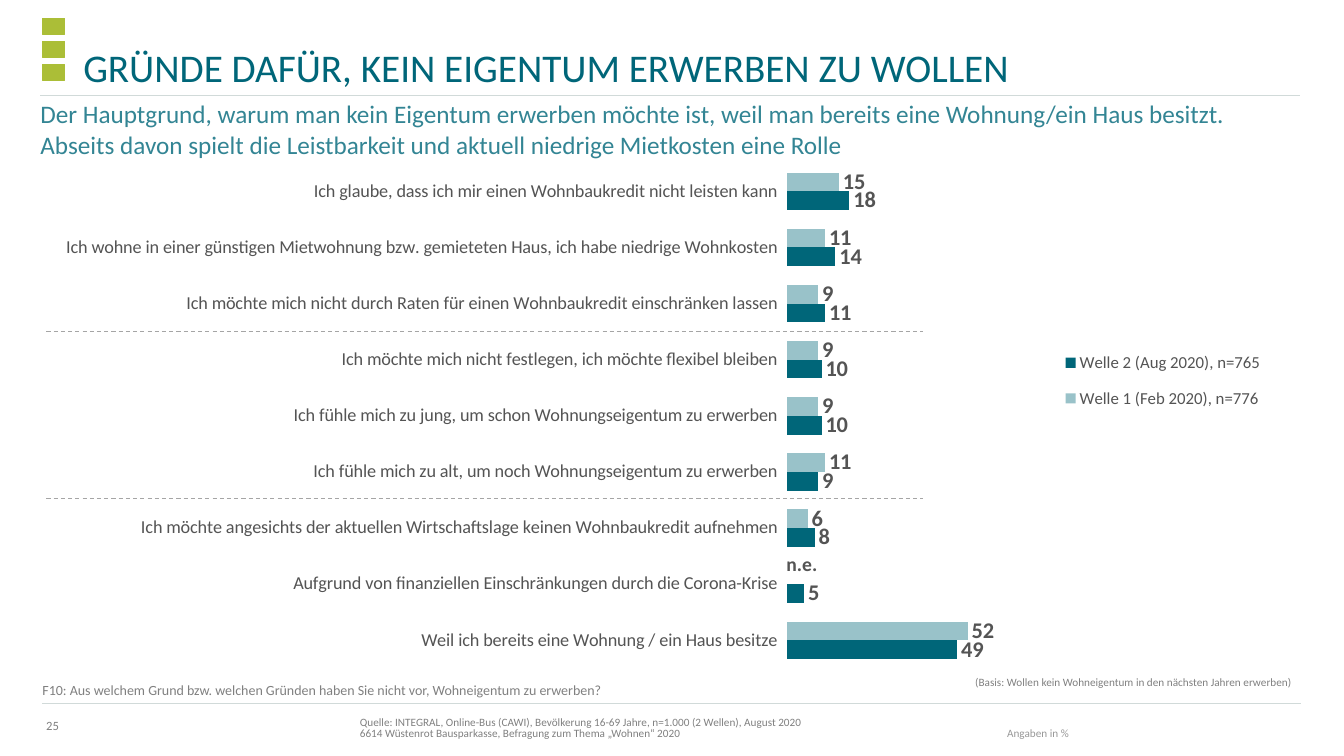
"""Build the slide on the reasons for not wanting to buy a home."""
from dataclasses import dataclass

from lxml.etree import Element, SubElement
from pptx import Presentation
from pptx.chart.data import CategoryChartData as ChartData
from pptx.dml.color import RGBColor
from pptx.enum.chart import XL_CHART_TYPE as Kind
from pptx.enum.chart import XL_LABEL_POSITION as Spot
from pptx.enum.chart import XL_LEGEND_POSITION as Side
from pptx.enum.chart import XL_TICK_LABEL_POSITION as TickSpot
from pptx.enum.chart import XL_TICK_MARK as Tick
from pptx.enum.dml import MSO_LINE as Dash
from pptx.enum.shapes import MSO_CONNECTOR as Link
from pptx.enum.shapes import MSO_SHAPE as Shape
from pptx.enum.text import MSO_ANCHOR as Anchor
from pptx.enum.text import PP_ALIGN as Align
from pptx.oxml.ns import qn
from pptx.slide import Slide
from pptx.text.text import Font
from pptx.util import Cm, Pt

FACE = "Calibri"
TEAL = RGBColor(0x00, 0x66, 0x79)
MID_TEAL = RGBColor(0x33, 0x85, 0x94)
PALE_TEAL = RGBColor(0x99, 0xC2, 0xC9)
GREEN = RGBColor(0xAB, 0xBE, 0x37)
DARK = RGBColor(0x54, 0x54, 0x54)
GRAY = RGBColor(0x80, 0x80, 0x80)
LIGHT = RGBColor(0x98, 0x98, 0x98)
RULE = RGBColor(0xD1, 0xDA, 0xD9)
DASHED = RGBColor(0xA5, 0xA5, 0xA5)


@dataclass(frozen=True)
class Note:
    text: str
    box: tuple[float, float, float, float]
    size: int
    color: RGBColor
    pad: tuple[float, float, float, float] = (0, 0.13, 0, 0.13)
    anchor: Anchor = Anchor.MIDDLE
    align: Align = Align.LEFT
    space: float | Pt | None = None
    wrap: bool = True
    bold: bool = False


@dataclass(frozen=True)
class Line:
    left: float
    right: float
    top: float
    color: RGBColor = RULE
    dash: Dash | None = None


@dataclass(frozen=True)
class Wave:
    name: str
    color: RGBColor
    values: tuple[int | None, ...]


FOOT_PAD = (0.56, 0.13, 0.25, 0.13)
NOTES = (
    Note("Quelle: INTEGRAL, Online-Bus (CAWI), Bevölkerung 16-69 Jahre, n=1.000 (2 Wellen), August 2020\n"
         "6614 Wüstenrot Bausparkasse, Befragung zum Thema „Wohnen“ 2020",
         (8.51, 17.93, 22.28, 0.84), 8, GRAY, FOOT_PAD, Anchor.BOTTOM, space=0.85),
    Note("Angaben in %", (24.82, 18.21, 2.57, 0.56), 8, LIGHT, FOOT_PAD, Anchor.BOTTOM, space=0.85),
    Note("25", (1.02, 18.08, 0.61, 0.38), 9, GRAY, (0, 0, 0, 0), align=Align.CENTER, wrap=False),
    Note("GRÜNDE DAFÜR, KEIN EIGENTUM ERWERBEN ZU WOLLEN", (1.85, 0.94, 30.94, 1.35), 28, TEAL,
         (0.25, 0, 0.25, 0), Anchor.BOTTOM, space=Pt(28)),
    Note("Der Hauptgrund, warum man kein Eigentum erwerben möchte ist, weil man bereits eine "
         "Wohnung/ein Haus besitzt. Abseits davon spielt die Leistbarkeit und aktuell niedrige "
         "Mietkosten eine Rolle", (1.02, 2.49, 31.78, 0.81), 18, MID_TEAL, (0, 0, 0.25, 0.13), Anchor.TOP),
    Note("F10: Aus welchem Grund bzw. welchen Gründen haben Sie nicht vor, Wohneigentum zu erwerben?",
         (1.07, 17.12, 21.34, 0.51), 10, GRAY),
    Note("(Basis: Wollen kein Wohneigentum in den nächsten Jahren erwerben)",
         (22.43, 16.74, 10.13, 0.91), 8, GRAY, align=Align.RIGHT),
    Note("n.e.", (19.56, 13.79, 1.3, 0.86), 14, DARK, (0.25, 0.13, 0.25, 0.13), Anchor.TOP,
         Align.CENTER, wrap=False, bold=True),
)
LINES = (
    Line(1.07, 32.79, 17.73),
    Line(1.02, 32.77, 2.41),
    Line(1.17, 23.27, 8.36, DASHED, Dash.DASH),
    Line(1.17, 23.27, 12.55, DASHED, Dash.DASH),
)
GROUNDS = (
    "Ich glaube, dass ich mir einen Wohnbaukredit nicht leisten kann",
    "Ich wohne in einer günstigen Mietwohnung bzw. gemieteten Haus, ich habe niedrige Wohnkosten",
    "Ich möchte mich nicht durch Raten für einen Wohnbaukredit einschränken lassen",
    "Ich möchte mich nicht festlegen, ich möchte flexibel bleiben",
    "Ich fühle mich zu jung, um schon Wohnungseigentum zu erwerben",
    "Ich fühle mich zu alt, um noch Wohnungseigentum zu erwerben",
    "Ich möchte angesichts der aktuellen Wirtschaftslage keinen Wohnbaukredit aufnehmen",
    "Aufgrund von finanziellen Einschränkungen durch die Corona-Krise",
    "Weil ich bereits eine Wohnung / ein Haus besitze",
)
WAVES = (
    Wave("Welle 1 (Feb 2020), n=776", PALE_TEAL, (15, 11, 9, 9, 9, 11, 6, None, 52)),
    Wave("Welle 2 (Aug 2020), n=765", TEAL, (18, 14, 11, 10, 10, 9, 8, 5, 49)),
)


def style(font: Font, size: int, color: RGBColor, bold: bool = False) -> None:
    font.name, font.size, font.bold = FACE, Pt(size), bold
    font.color.rgb = color


def add_note(slide: Slide, note: Note) -> None:
    frame = slide.shapes.add_textbox(*map(Cm, note.box)).text_frame
    frame.word_wrap = note.wrap
    frame.vertical_anchor = note.anchor
    (frame.margin_left, frame.margin_top,
     frame.margin_right, frame.margin_bottom) = map(Cm, note.pad)
    para = frame.paragraphs[0]
    para.text = note.text
    para.alignment = note.align
    if note.space is not None:
        para.line_spacing = note.space
    style(para.font, note.size, note.color, note.bold)


def add_line(slide: Slide, line: Line) -> None:
    rule = slide.shapes.add_connector(
        Link.STRAIGHT, Cm(line.left), Cm(line.top), Cm(line.right), Cm(line.top))
    rule.line.color.rgb = line.color
    rule.line.width = Pt(0.75)
    if line.dash is not None:
        rule.line.dash_style = line.dash
    SubElement(rule._element.spPr, qn("a:effectLst"))


def add_square(slide: Slide, top: float) -> None:
    square = slide.shapes.add_shape(Shape.RECTANGLE, Cm(1.07), Cm(top), Cm(0.56), Cm(0.41))
    square.shadow.inherit = False
    square.fill.solid()
    square.fill.fore_color.rgb = square.line.color.rgb = GREEN
    square.line.width = Pt(0.5)


def make_layout(inner: bool, x: float, y: float, w: float, h: float) -> Element:
    layout = Element(qn("c:layout"))
    manual = SubElement(layout, qn("c:manualLayout"))
    if inner:
        SubElement(manual, qn("c:layoutTarget"), val="inner")
    for key, value in (("xMode", "edge"), ("yMode", "edge"), ("x", x), ("y", y), ("w", w), ("h", h)):
        SubElement(manual, qn(f"c:{key}"), val=str(value))
    return layout


def add_bars(slide: Slide) -> None:
    data = ChartData()
    data.categories = GROUNDS
    for wave in WAVES:
        data.add_series(wave.name, wave.values)
    box = map(Cm, (-4.06, 3.43, 37.92, 13.69))
    chart = slide.shapes.add_chart(Kind.BAR_CLUSTERED, *box, data).chart
    style(chart.font, 10, DARK)
    chart.has_title = False

    grounds = chart.category_axis
    grounds.reverse_order = True
    grounds.major_tick_mark = Tick.NONE
    grounds.tick_label_position = TickSpot.LOW
    grounds.format.line.fill.background()
    style(grounds.tick_labels.font, 13, DARK)
    scale = chart.value_axis
    scale.minimum_scale, scale.maximum_scale, scale.major_unit = 0, 160, 20
    scale.has_major_gridlines = scale.visible = False

    plot = chart.plots[0]
    plot.gap_width, plot.overlap, plot.vary_by_categories = 100, 0, False
    for wave, bars in zip(WAVES, plot.series):
        bars.format.fill.solid()
        bars.format.fill.fore_color.rgb = wave.color
        labels = bars.data_labels
        labels.show_value, labels.position = True, Spot.OUTSIDE_END
        style(labels.font, 16, DARK, True)

    chart.has_legend = True
    legend = chart.legend
    legend.position, legend.include_in_layout = Side.RIGHT, False
    style(legend.font, 12, DARK)
    root = chart._chartSpace
    for old in root.xpath(".//c:plotArea/c:layout | .//c:legend/c:layout"):
        old.getparent().remove(old)
    root.xpath(".//c:plotArea")[0].insert(0, make_layout(True, 0.63, 0.05, 0.37, 0.93))
    root.xpath(".//c:legendPos")[0].addnext(make_layout(False, 0.8, 0.37, 0.16, 0.16))


def main() -> None:
    deck = Presentation()
    deck.slide_width, deck.slide_height = Cm(33.87), Cm(19.05)
    slide = deck.slides.add_slide(deck.slide_layouts[6])
    for row in range(3):
        add_square(slide, 0.46 + 0.58 * row)
    add_bars(slide)
    for line in LINES:
        add_line(slide, line)
    for note in NOTES:
        add_note(slide, note)
    deck.save("out.pptx")


if __name__ == "__main__":
    main()
